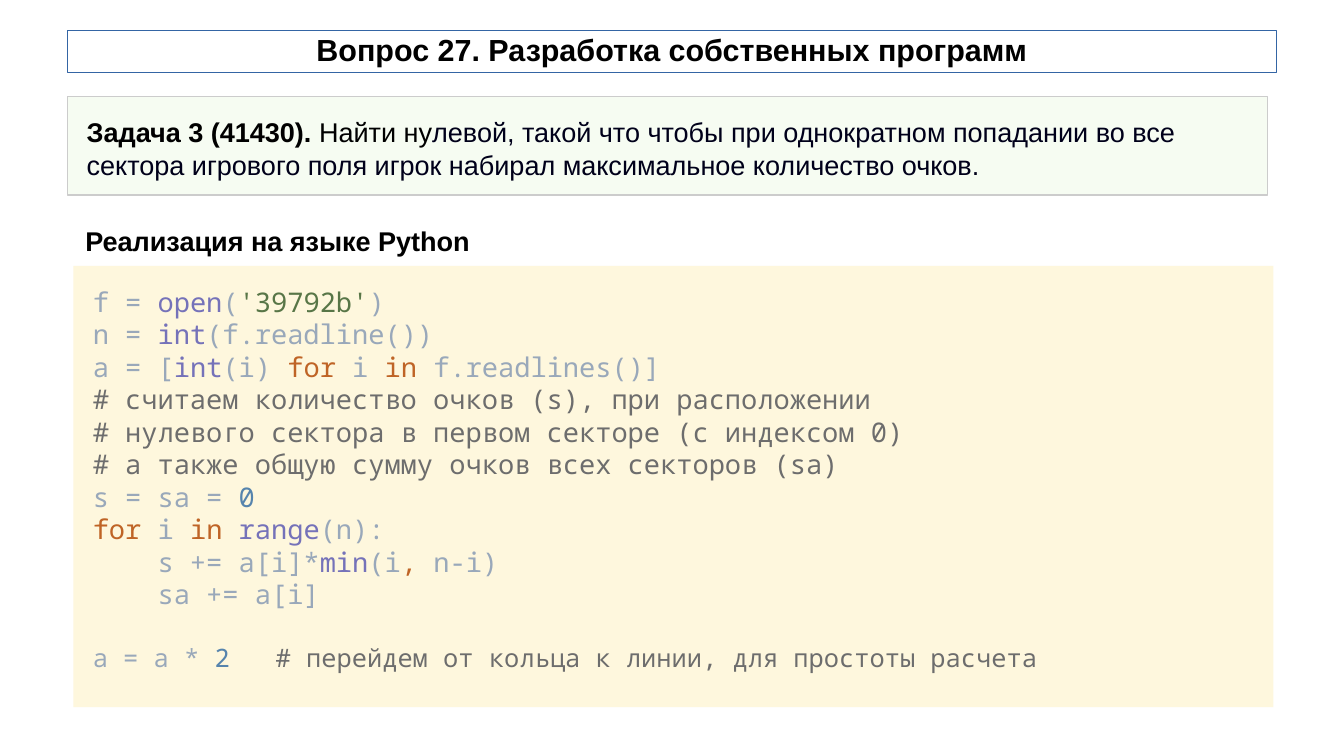
from pptx import Presentation
from pptx.dml.color import RGBColor
from pptx.enum.shapes import MSO_SHAPE
from pptx.enum.text import MSO_ANCHOR, PP_ALIGN
from pptx.util import Inches, Pt

RECTANGLE = MSO_SHAPE.RECTANGLE
TOP, MIDDLE = MSO_ANCHOR.TOP, MSO_ANCHOR.MIDDLE
LEFT, CENTER = PP_ALIGN.LEFT, PP_ALIGN.CENTER

COLORS = {
    "black": "000000", "task text": "00001A",
    "title line": "3465A4", "task fill": "F6FCF2", "task line": "CCCCCC",
    "code fill": "FEF7DD",
    "plain": "99A8BA", "builtin": "7572B9", "string": "587647",
    "keyword": "BF6426", "comment": "6D6D6D", "number": "5684AD",
}
WIDTH, HEIGHT = 11.02, 6.2
MARGIN = 0.05 * WIDTH
CODE_LEFT = MARGIN + 0.05
PANEL_WIDTH = 9.84
PADDING = 0.16

presentation = Presentation()
presentation.slide_width = Inches(WIDTH)
presentation.slide_height = Inches(HEIGHT)
slide = presentation.slides.add_slide(presentation.slide_layouts[6])


def add_panel(left, top, width, height, fill=None, line=None, line_width=0,
              padding=(PADDING, PADDING), anchor=TOP):
    """Add a rectangle and return its text frame."""
    shape = slide.shapes.add_shape(RECTANGLE, Inches(left), Inches(top), Inches(width), Inches(height))
    shape.shadow.inherit = False
    if fill:
        shape.fill.solid()
        shape.fill.fore_color.rgb = RGBColor.from_string(COLORS[fill])
    else:
        shape.fill.background()
    if line:
        shape.line.color.rgb = RGBColor.from_string(COLORS[line])
        shape.line.width = Pt(line_width)
    else:
        shape.line.fill.background()
    frame = shape.text_frame
    frame.word_wrap = True
    frame.vertical_anchor = anchor
    frame.margin_left = frame.margin_right = Inches(padding[0])
    frame.margin_top = frame.margin_bottom = Inches(padding[1])
    return frame


def write_runs(paragraph, runs, size, font="Arial", align=LEFT):
    """Write (text, color, bold) runs into a paragraph."""
    paragraph.alignment = align
    for text, color, bold in runs:
        run = paragraph.add_run()
        run.text = text
        run.font.name = font
        run.font.size = Pt(size)
        run.font.bold = bold
        run.font.color.rgb = RGBColor.from_string(COLORS[color])


# Code listing
code_lines = [
    [("f = ", "plain"), ("open", "builtin"), ("(", "plain"), ("'39792b'", "string"), (")", "plain")],
    [("n = ", "plain"), ("int", "builtin"), ("(f.readline())", "plain")],
    [("a = [", "plain"), ("int", "builtin"), ("(i) ", "plain"), ("for ", "keyword"),
     ("i ", "plain"), ("in ", "keyword"), ("f.readlines()]", "plain")],
    [("# считаем количество очков (s), при расположении", "comment")],
    [("# нулевого сектора в первом секторе (с индексом 0)", "comment")],
    [("# а также общую сумму очков всех секторов (sa)", "comment")],
    [("s = sa = ", "plain"), ("0", "number")],
    [("for ", "keyword"), ("i ", "plain"), ("in ", "keyword"), ("range", "builtin"), ("(n):", "plain")],
    [("    s += a[i]*", "plain"), ("min", "builtin"), ("(i", "plain"), (", ", "keyword"), ("n-i)", "plain")],
    [("    sa += a[i]", "plain")],
    [("a = a * ", "plain"), ("2   ", "number"),
     ("# перейдем от кольца к линии, для простоты расчета", "comment")],
]
code_frame = add_panel(CODE_LEFT, 2.18, PANEL_WIDTH, 3.62, fill="code fill")
last = len(code_lines) - 1
for index, code_line in enumerate(code_lines):
    paragraph = code_frame.add_paragraph() if index else code_frame.paragraphs[0]
    runs = [(text, color, False) for text, color in code_line]
    write_runs(paragraph, runs, 15 if index == last else 16, "Noto Sans Mono")
paragraph.space_before = Pt(19)

# Heading above the code
heading = slide.shapes.add_textbox(Inches(CODE_LEFT), Inches(1.79), Inches(3.93), Inches(0.35))
heading.text_frame.word_wrap = True
write_runs(heading.text_frame.paragraphs[0], [("Реализация на языке Python", "black", True)], 16)

# Task statement
task_frame = add_panel(MARGIN, 0.79, PANEL_WIDTH, 0.81, fill="task fill", line="task line")
write_runs(task_frame.paragraphs[0], [
    ("Задача 3 (41430).", "black", True),
    (" Найти ну", "black", False),
    ("левой, такой что чтобы при однократном попадании во все сектора игрового поля "
     "игрок набирал максимальное количество очков.", "task text", False),
], 16)

# Slide title
title_frame = add_panel(MARGIN, 0.25, 0.9 * WIDTH, 0.34, line="title line", line_width=0.28,
                        padding=(0.04, 0), anchor=MIDDLE)
title = title_frame.paragraphs[0]
title.line_spacing = 0.9
write_runs(title, [("Вопрос 27. Разработка собственных программ", "black", True)], 18, align=CENTER)

presentation.save("out.pptx")
